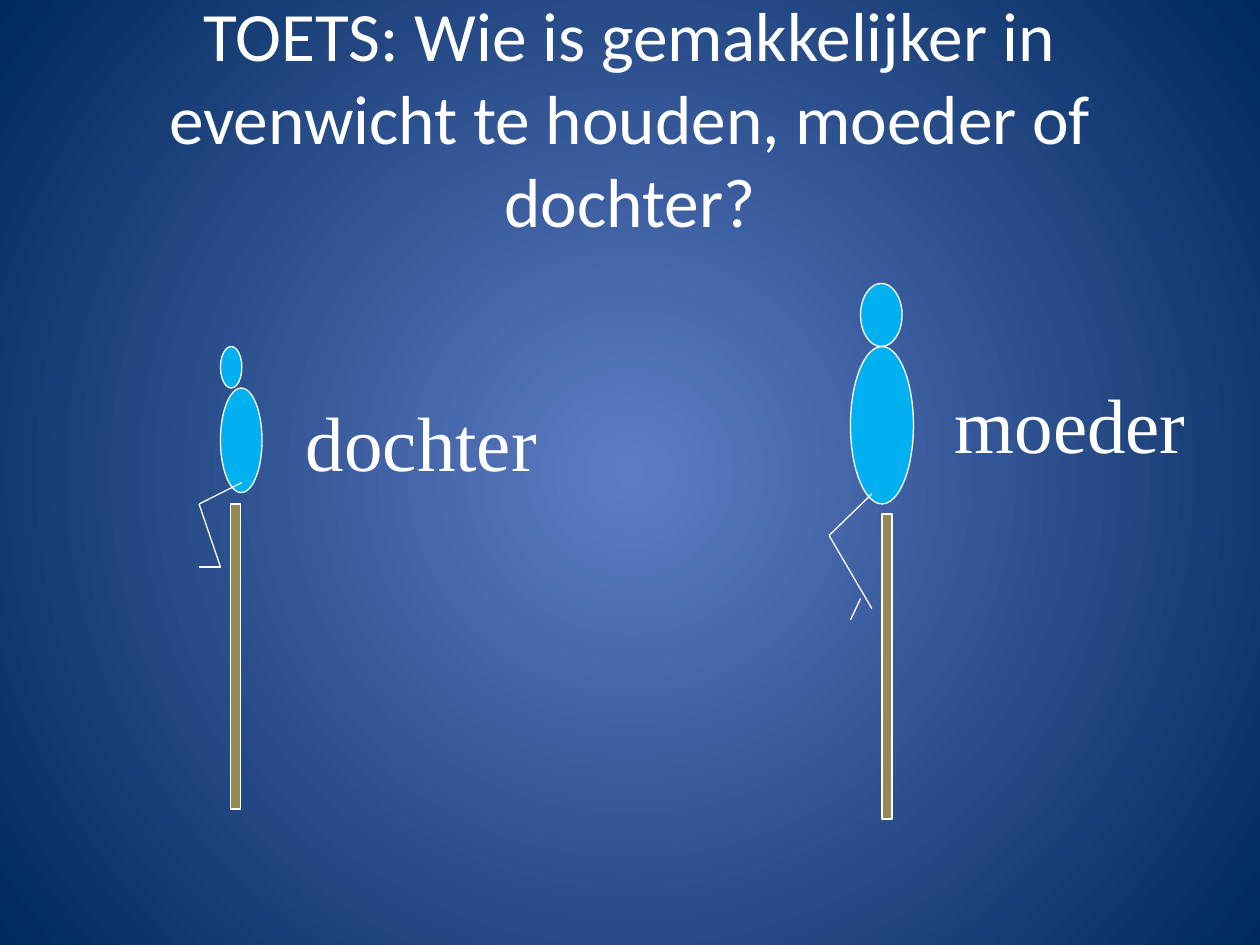
from dataclasses import dataclass

from lxml.etree import SubElement
from pptx import Presentation
from pptx.dml.color import RGBColor
from pptx.enum.shapes import MSO_CONNECTOR as Connector, MSO_SHAPE as Shape
from pptx.enum.text import MSO_ANCHOR as Anchor, MSO_AUTO_SIZE as AutoSize, PP_ALIGN as Align
from pptx.oxml import parse_xml
from pptx.oxml.ns import nsdecls, qn
from pptx.util import Inches, Pt

WHITE = RGBColor(0xFF, 0xFF, 0xFF)
SKY = RGBColor(0x00, 0xB0, 0xF0)
WOOD = RGBColor(0x94, 0x8A, 0x54)
GLOW = RGBColor(0x5E, 0x7C, 0xC5)
NIGHT = RGBColor(0x00, 0x29, 0x5C)

LINE_WIDTH = Pt(0.75)
POLE_SIZE = (0.08, 2.42)
LABEL_SIZE = (2.08, 0.83)

Point = tuple[float, float]
Box = tuple[float, float, float, float]


@dataclass(frozen=True)
class Person:
    name: str
    head: Box
    body: Box
    pole_top: Point
    limbs: tuple[tuple[Point, ...], ...]
    label_corner: Point


PEOPLE = (
    Person("dochter", (1.75, 2.75, 0.17, 0.33), (1.75, 3.08, 0.33, 0.83), (1.83, 4),
           (((1.92, 3.83), (1.58, 4), (1.75, 4.5), (1.58, 4.5)),),
           (2.33, 3.08)),
    Person("moeder", (6.83, 2.25, 0.33, 0.5), (6.75, 2.75, 0.5, 1.25), (7, 4.08),
           (((6.92, 3.92), (6.58, 4.25), (6.92, 4.83)), ((6.83, 4.75), (6.75, 4.92))),
           (7.48, 2.94)),
)


def inches(values) -> list:
    return [Inches(value) for value in values]


def format_text(paragraph, font_name: str, size: float) -> None:
    paragraph.font.color.rgb = WHITE
    for key, value in {"name": font_name, "size": Pt(size)}.items():
        setattr(paragraph.font, key, value)


def paint_background(slide) -> None:
    """Radial gradient, light in the centre."""
    fill = slide.background.fill
    fill.gradient()
    for stop, color in zip(fill.gradient_stops, (GLOW, NIGHT)):
        stop.color.rgb = color
    linear = next(slide.element.iter(qn("a:lin")))
    linear.getparent().replace(linear, parse_xml(
        f'<a:path {nsdecls("a")} path="circle">'
        '<a:fillToRect l="50000" t="50000" r="50000" b="50000"/></a:path>'))


def add_part(slide, kind: Shape, box: Box, color: RGBColor) -> None:
    shape = slide.shapes.add_shape(kind, *inches(box))
    shape.shadow.inherit = False
    shape.fill.solid()
    shape.fill.fore_color.rgb = color
    shape.line.color.rgb = WHITE
    shape.line.width = LINE_WIDTH


def add_limb(slide, points: tuple[Point, ...]) -> None:
    for start, end in zip(points, points[1:]):
        line = slide.shapes.add_connector(Connector.STRAIGHT, *inches(start + end))
        line.line.color.rgb = WHITE
        line.line.width = LINE_WIDTH
        SubElement(line.element.spPr, qn("a:effectLst"))


def add_label(slide, person: Person) -> None:
    frame = slide.shapes.add_textbox(*inches(person.label_corner + LABEL_SIZE)).text_frame
    frame.text = person.name
    frame.word_wrap = True
    frame.auto_size = AutoSize.SHAPE_TO_FIT_TEXT
    format_text(frame.paragraphs[0], "Times New Roman", 44)


def add_person(slide, person: Person) -> None:
    add_part(slide, Shape.RECTANGLE, person.pole_top + POLE_SIZE, WOOD)
    add_part(slide, Shape.OVAL, person.body, SKY)
    add_part(slide, Shape.OVAL, person.head, SKY)
    for points in person.limbs:
        add_limb(slide, points)
    add_label(slide, person)


def add_title(slide, text: str) -> None:
    title = slide.shapes.title
    title.left, title.top, title.width, title.height = inches((0.5, 0.3, 9, 1.25))
    frame = title.text_frame
    frame.text = text
    for key, value in {"word_wrap": True, "auto_size": AutoSize.NONE,
                       "vertical_anchor": Anchor.MIDDLE}.items():
        setattr(frame, key, value)
    frame.paragraphs[0].alignment = Align.CENTER
    format_text(frame.paragraphs[0], "Calibri", 39.6)


def main() -> None:
    presentation = Presentation()
    presentation.slide_width, presentation.slide_height = inches((10, 7.5))
    slide = presentation.slides.add_slide(presentation.slide_layouts[5])  # title only
    paint_background(slide)
    add_title(slide, "TOETS: Wie is gemakkelijker in evenwicht te houden, moeder of dochter?")
    for person in PEOPLE:
        add_person(slide, person)
    presentation.save("out.pptx")


if __name__ == "__main__":
    main()
